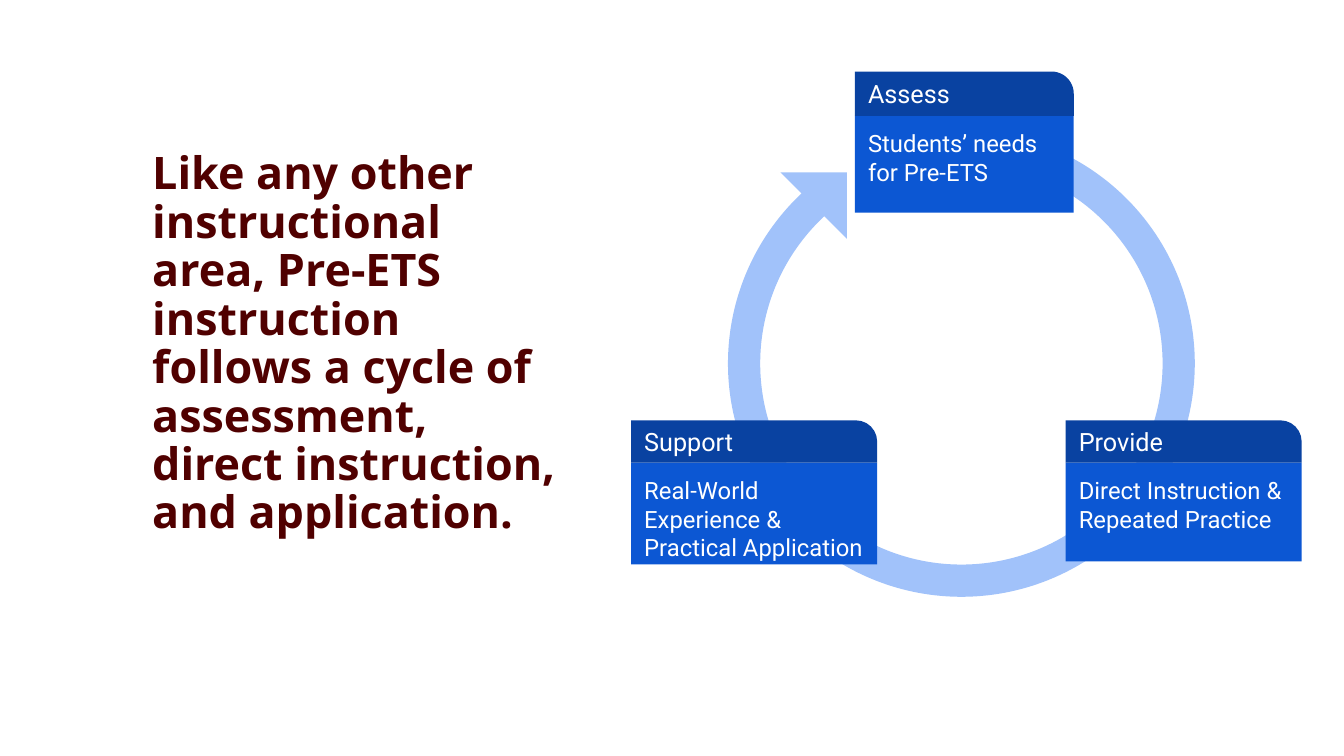
from lxml.etree import SubElement
from pptx import Presentation
from pptx.dml.color import RGBColor
from pptx.enum.shapes import MSO_SHAPE
from pptx.enum.text import MSO_ANCHOR, MSO_AUTO_SIZE, PP_ALIGN
from pptx.oxml.ns import qn
from pptx.util import Inches, Pt

MAROON = RGBColor(0x50, 0x00, 0x00)
WHITE = RGBColor(0xFF, 0xFF, 0xFF)
NAVY = RGBColor(0x09, 0x42, 0xA1)
BLUE = RGBColor(0x0C, 0x57, 0xD3)
PALE_BLUE = RGBColor(0xA1, 0xC2, 0xFA)


class CycleSlide:
    """Holds the style and the current slide."""

    body_font = "Open Sans"
    card_font = "Roboto"
    inset = Inches(0.13)

    def __init__(self, prs):
        self.slide = prs.slides.add_slide(prs.slide_layouts[1])
        title = self.slide.shapes.title
        title.element.getparent().remove(title.element)

    def shape(self, kind, left, top, width, height, color):
        sp = self.slide.shapes.add_shape(
            kind, Inches(left), Inches(top), Inches(width), Inches(height))
        sp.shadow.inherit = False
        sp.fill.solid()
        sp.fill.fore_color.rgb = color
        sp.line.fill.background()
        return sp

    def label(self, sp, text, size, anchor):
        tf = sp.text_frame
        tf.word_wrap = True
        tf.vertical_anchor = anchor
        tf.margin_left = tf.margin_right = self.inset
        tf.margin_top = tf.margin_bottom = self.inset
        tf.text = text
        p = tf.paragraphs[0]
        p.alignment = PP_ALIGN.LEFT
        self.style(p, self.card_font, size, WHITE)

    def style(self, p, name, size, color, bold=False):
        for r in p.runs:
            r.font.name = name
            r.font.size = Pt(size)
            r.font.bold = bold
            r.font.color.rgb = color

    def body(self, text, left, top, width, height):
        sp = self.slide.placeholders[1]
        sp.left, sp.top = Inches(left), Inches(top)
        sp.width, sp.height = Inches(width), Inches(height)
        tf = sp.text_frame
        tf.text = text
        tf.word_wrap = True
        tf.auto_size = MSO_AUTO_SIZE.NONE
        tf.vertical_anchor = MSO_ANCHOR.TOP
        p = tf.paragraphs[0]
        pPr = p._p.get_or_add_pPr()
        pPr.set("marL", "0")
        pPr.set("indent", "0")
        SubElement(pPr, qn("a:buNone"))
        p.line_spacing = 0.9
        p.space_before = Pt(0)
        self.style(p, self.body_font, 32, MAROON, bold=True)

    def ring(self, left, top, size):
        arc = self.shape(MSO_SHAPE.BLOCK_ARC, left, top, size, size, PALE_BLUE)
        arc.rotation = 180
        for i, value in enumerate((53.998, 30.127, 0.069)):
            arc.adjustments[i] = value

    def arrowhead(self, left, top, size):
        tip = self.shape(MSO_SHAPE.RIGHT_TRIANGLE, left, top, size, size, PALE_BLUE)
        tip.rotation = 180

    def card(self, heading, text, left, top, width, head_height, text_height):
        box = self.shape(MSO_SHAPE.RECTANGLE, left, top + head_height,
                         width, text_height, BLUE)
        self.label(box, text, 17, MSO_ANCHOR.TOP)
        head = self.shape(MSO_SHAPE.ROUND_1_RECTANGLE, left, top,
                          width, head_height, NAVY)
        head.adjustments[0] = 0.5
        self.label(head, heading, 18, MSO_ANCHOR.MIDDLE)


def main():
    prs = Presentation()
    prs.slide_width, prs.slide_height = Inches(13.33), Inches(7.5)
    s = CycleSlide(prs)

    # Statement on the left
    s.body("Like any other instructional area, Pre-ETS instruction follows "
           "a cycle of assessment, direct instruction, and application.",
           1.41, 1.45, 4.3, 4.96)

    # Circular arrow
    s.ring(7.22, 1.29, 4.63)
    s.arrowhead(7.74, 1.71, 0.66)

    # Stages of the cycle
    stages = [
        ("Provide", "Direct Instruction & Repeated Practice",
         10.57, 4.17, 2.34, 0.42, 0.98),
        ("Assess", "Students’ needs for Pre-ETS",
         8.48, 0.71, 2.17, 0.44, 0.96),
        ("Support", "Real-World Experience & Practical Application",
         6.26, 4.17, 2.44, 0.42, 1.01),
    ]
    for stage in stages:
        s.card(*stage)

    prs.save("out.pptx")


if __name__ == "__main__":
    main()
